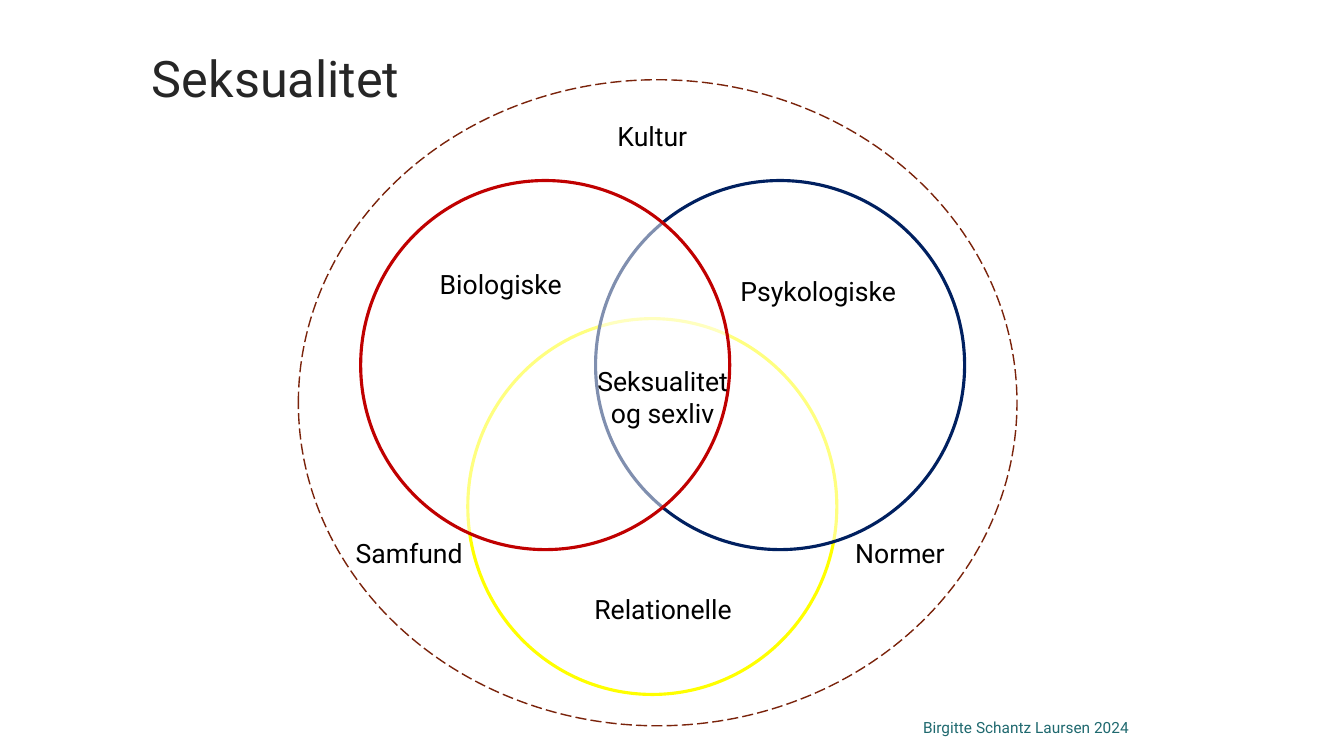
from pptx import Presentation
from pptx import util as u
from pptx.dml.color import RGBColor
from pptx.enum import dml, shapes, text
from pptx.oxml.ns import qn
from lxml import etree

hues = {"white": "FFFFFF", "rust": "7A230B", "yellow": "FFFF00", "navy": "002060",
        "red": "C00000", "black": "000000", "dark": "262626", "teal": "1F696F"}

deck = Presentation()
deck.slide_width = u.Cm(33.87)
deck.slide_height = u.Cm(19.05)
slide = deck.slides.add_slide(deck.slide_layouts[6])


def add_ring(left, top, width, height, hue, weight):
    ring = slide.shapes.add_shape(shapes.MSO_SHAPE.OVAL, u.Cm(left), u.Cm(top),
                                  u.Cm(width), u.Cm(height))
    ring.shadow.inherit = False
    ring.fill.solid()
    ring.fill.fore_color.rgb = RGBColor.from_string(hues["white"])
    ring.line.color.rgb = RGBColor.from_string(hues[hue])
    ring.line.width = u.Pt(weight)
    return ring


def add_label(words, left, top, width, height, size=19, hue="black", inset=(0, 0),
              align=text.PP_ALIGN.CENTER, anchor=text.MSO_ANCHOR.TOP):
    box = slide.shapes.add_textbox(u.Cm(left), u.Cm(top), u.Cm(width), u.Cm(height))
    frame = box.text_frame
    frame.word_wrap = True
    frame.vertical_anchor = anchor
    frame.margin_left = frame.margin_right = u.Cm(inset[0])
    frame.margin_top = frame.margin_bottom = u.Cm(inset[1])
    frame.text = words
    line = frame.paragraphs[0]
    line.alignment = align
    font = line.runs[0].font
    font.name = "Roboto"
    font.size = u.Pt(size)
    font.color.rgb = RGBColor.from_string(hues[hue])


culture = add_ring(7.52, 2.01, 18.11, 16.28, "rust", 1)
culture.line.dash_style = dml.MSO_LINE.LONG_DASH

pad = (0.25, 0.13)
add_label("Seksualitet", 3.58, 1.07, 26.67, 3.18, 36, "dark", pad, text.PP_ALIGN.LEFT)
add_label("Birgitte Schantz Laursen 2024", 20.5, 17.83, 10.72, 1.02, 11, "teal", pad,
          anchor=text.MSO_ANCHOR.MIDDLE)

side = 9.3
for left, top, height, hue in [(11.79, 8.03, 9.47, "yellow"),
                               (15.01, 4.55, side, "navy"),
                               (9.09, 4.55, side, "red")]:
    ring = add_ring(left, top, side, height, hue, 2.25)
    tint = ring.fill._xPr.find(qn("a:solidFill"))[0]
    etree.SubElement(tint, qn("a:alpha"), val="50000")

for words, left, top in [("Biologiske", 9.52, 6.76), ("Psykologiske", 17.52, 6.93),
                         ("Relationelle", 13.61, 14.94), ("Kultur", 13.34, 3.02),
                         ("Normer", 19.58, 13.54), ("Samfund", 7.21, 13.54)]:
    add_label(words, left, top, 6.2, 0.81)
add_label("Seksualitet og sexliv", 15.01, 9.19, 3.38, 1.63)

deck.save("out.pptx")
